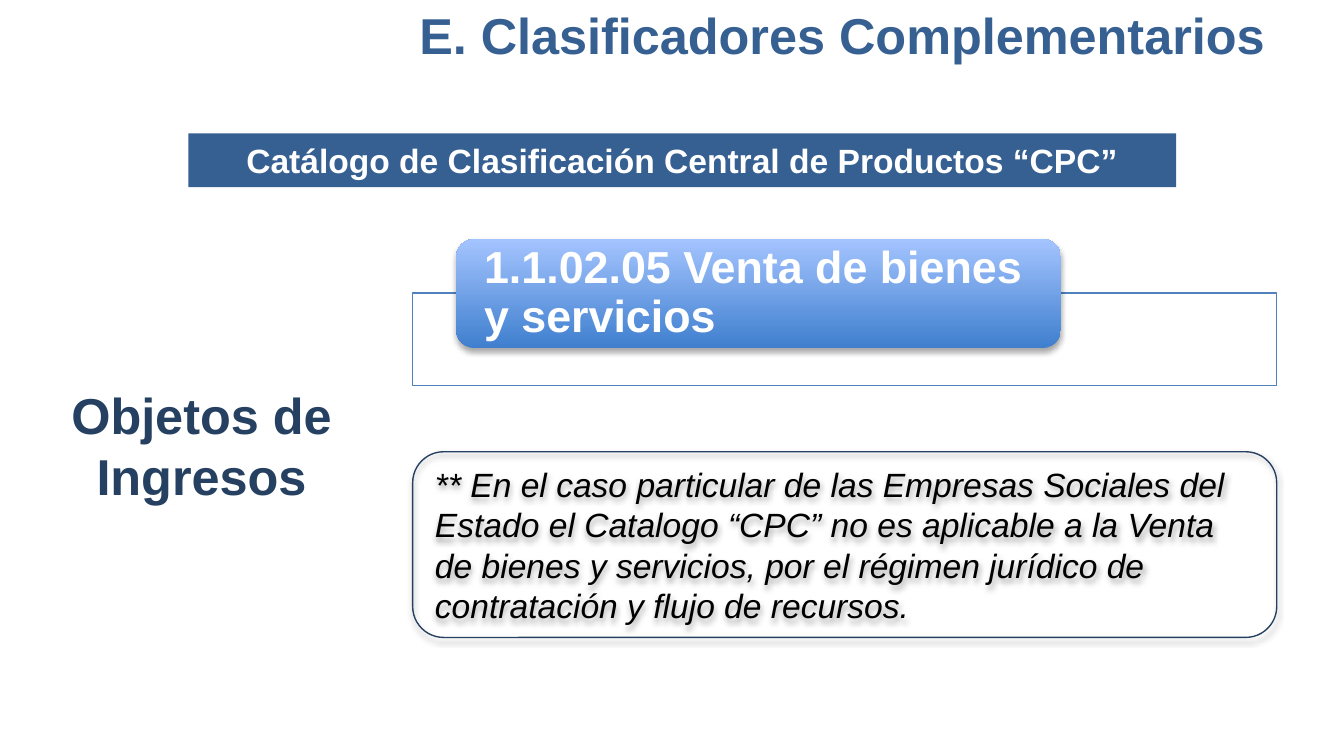
from lxml import etree
from pptx import Presentation
from pptx.dml.color import RGBColor
from pptx.enum.shapes import MSO_SHAPE as Shape
from pptx.enum.text import MSO_ANCHOR as Anchor, PP_ALIGN as Align
from pptx.oxml.ns import qn
from pptx.util import Cm, Pt

COLORS = {
    "blue": "376092", "navy": "254061", "outline": "4F81BD",
    "gradient_bottom": "3F7FCE", "gradient_top": "A4C4FF",
    "white": "FFFFFF", "black": "000000",
}
LEFT, WIDTH = 7.8, 16.33  # shared by the frame and the note


def write(box, text, size, color, bold=True, italic=False, align=Align.LEFT,
          anchor=Anchor.TOP, side=0.25, edge=0.13, spacing=1.0):
    """Fill a box with one formatted paragraph; side and edge are margins in cm."""
    frame = box.text_frame
    frame.word_wrap = True
    frame.vertical_anchor = anchor
    frame.margin_left = frame.margin_right = Cm(side)
    frame.margin_top = frame.margin_bottom = Cm(edge)
    para = frame.paragraphs[0]
    para.alignment = align
    para.line_spacing = spacing
    span = para.add_run()
    span.text = text
    span.font.name = "Arial"
    span.font.size = Pt(size)
    span.font.bold = bold
    span.font.italic = italic
    span.font.color.rgb = RGBColor.from_string(COLORS[color])


def add_panel(kind, left, top, width, height, fill=None, line=None, shadow=False):
    panel = page.shapes.add_shape(kind, Cm(left), Cm(top), Cm(width), Cm(height))
    panel.shadow.inherit = False
    if fill:
        panel.fill.solid()
        panel.fill.fore_color.rgb = RGBColor.from_string(COLORS[fill])
    else:
        panel.fill.background()
    if line:
        panel.line.color.rgb = RGBColor.from_string(COLORS[line])
        panel.line.width = Pt(0.75)
    else:
        panel.line.fill.background()
    if shadow:
        effects = panel._element.spPr.find(qn("a:effectLst"))
        outer = etree.SubElement(effects, qn("a:outerShdw"), blurRad=str(Pt(3.1)),
                                 dist=str(Pt(1.8)), dir="5400000", rotWithShape="0")
        tint = etree.SubElement(outer, qn("a:srgbClr"), val=COLORS["black"])
        etree.SubElement(tint, qn("a:alpha"), val="35000")
    return panel


deck = Presentation()
deck.slide_width, deck.slide_height = Cm(25.4), Cm(14.29)
page = deck.slides.add_slide(deck.slide_layouts[6])

# Headings
title = page.shapes.add_textbox(Cm(5.49), Cm(-0.05), Cm(18.67), Cm(1.32))
write(title, "E. Clasificadores Complementarios", 27, "blue", align=Align.RIGHT)

banner = add_panel(Shape.RECTANGLE, 3.56, 2.52, 18.67, 1.02, fill="blue")
write(banner, "Catálogo de Clasificación Central de Productos “CPC”", 18, "white",
      align=Align.CENTER)

side_label = page.shapes.add_textbox(Cm(0.84), Cm(7.14), Cm(5.94), Cm(2.57))
write(side_label, "Objetos de Ingresos", 27, "navy", align=Align.CENTER)

# Income item over its frame
item_frame = add_panel(Shape.RECTANGLE, LEFT, 5.54, WIDTH, 1.75,
                       fill="white", line="outline")
frame_color = item_frame._element.spPr.find(qn("a:solidFill"))[0]
etree.SubElement(frame_color, qn("a:alpha"), val="90000")

item = add_panel(Shape.ROUNDED_RECTANGLE, 8.62, 4.52, 11.43, 2.06, shadow=True)
item.fill.gradient()
item.fill.gradient_angle = 90
for stop, name in zip(item.fill.gradient_stops, ("gradient_bottom", "gradient_top")):
    stop.color.rgb = RGBColor.from_string(COLORS[name])

item_label = page.shapes.add_textbox(Cm(8.72), Cm(4.62), Cm(11.23), Cm(1.86))
write(item_label, "1.1.02.05 Venta de bienes y servicios", 24, "white",
      anchor=Anchor.MIDDLE, side=0.43, edge=0, spacing=0.9)

# Exception note
note = add_panel(Shape.ROUNDED_RECTANGLE, LEFT, 8.54, WIDTH, 3.51,
                 line="navy", shadow=True)
write(note, "** En el caso particular de las Empresas Sociales del Estado el Catalogo "
      "“CPC” no es aplicable a la Venta de bienes y servicios, por el régimen "
      "jurídico de contratación y flujo de recursos.", 18, "black",
      bold=False, italic=True, anchor=Anchor.MIDDLE)

deck.save("out.pptx")
